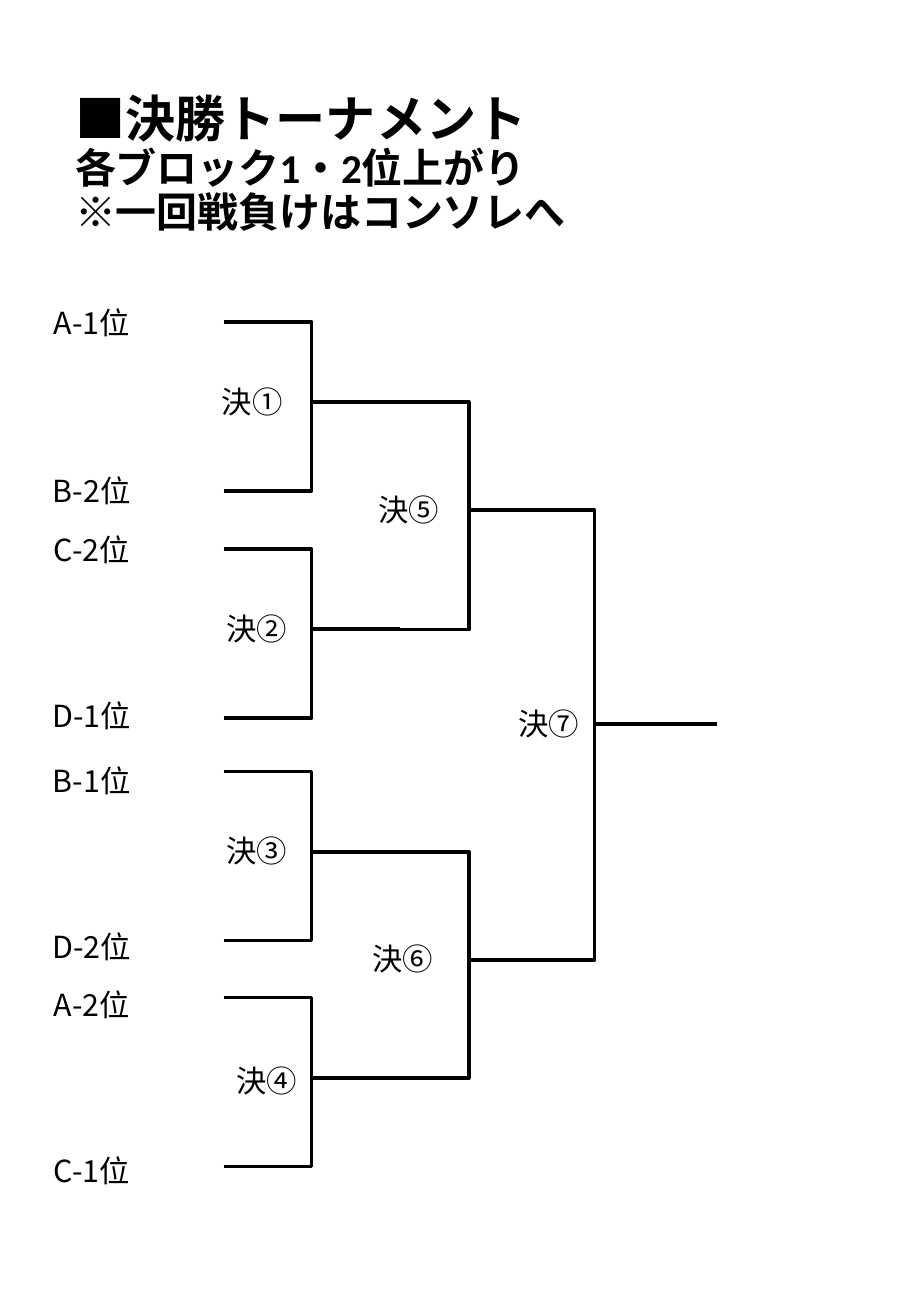
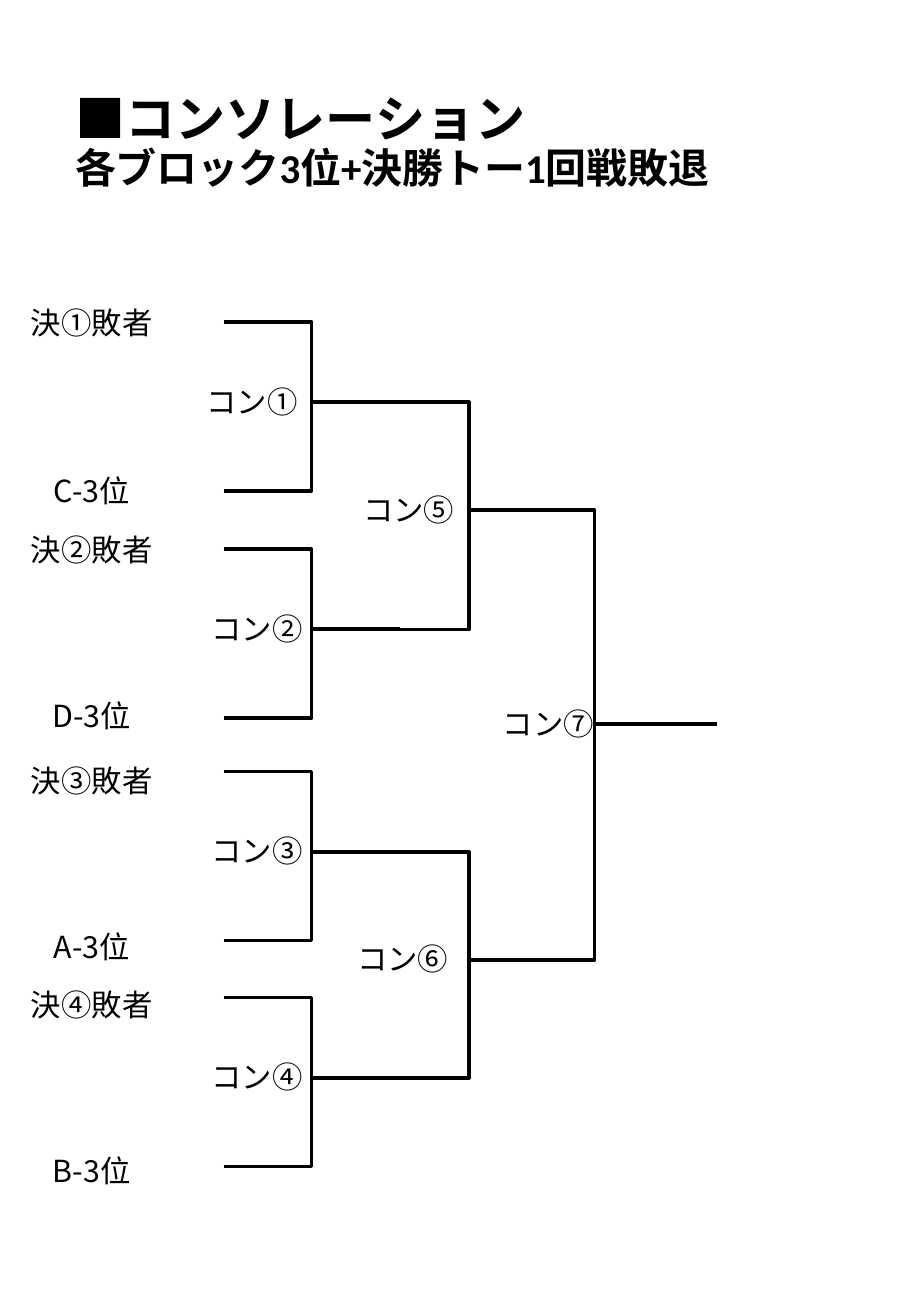
import pptx
import pptx.util
import pptx.dml.color
import pptx.enum.shapes
import pptx.enum.text
import pptx.oxml.ns
from lxml import etree

PX = 9144
OUTPUT_RATIO = 0.476
ROUND_X = [(184, 329), (285, 487), (389, 590)]
FIRST_ROUND = [(265, 404), (452, 591), (635, 774), (821, 960)]
ENTRY_Y = [245, 384, 432, 569, 622, 759, 807, 943]
MATCH_X = [130, 134, 134, 134, 259, 254, 374]
NUMBERS = "①②③④⑤⑥⑦"


def px(n):
    return pptx.util.Emu(n * PX)


def color(value):
    return pptx.dml.color.RGBColor.from_string(value)


class Deck:
    ink = "000000"
    title_font = "Calibri"
    label_font = "Noto Sans CJK JP"

    def __init__(self):
        self.prs = pptx.Presentation()
        self.prs.slide_width, self.prs.slide_height = px(750), px(1083)
        self.s = None

    def slide(self):
        self.s = self.prs.slides.add_slide(self.prs.slide_layouts[6])

    def box(self, x, y, w, h):
        tf = self.s.shapes.add_textbox(px(x), px(y), px(w), px(h)).text_frame
        tf.word_wrap = True
        return tf

    def font(self, p, name):
        p.font.name = name
        p.font.color.rgb = color(self.ink)
        qn = pptx.oxml.ns.qn
        props = p._p.pPr.find(qn("a:defRPr"))
        etree.SubElement(props, qn("a:ea")).set("typeface", self.label_font)

    def title(self, y, w, heading, *details):
        tf = self.box(52, y, w, 50)
        tf.vertical_anchor = pptx.enum.text.MSO_ANCHOR.MIDDLE
        p = tf.paragraphs[0]
        p.line_spacing = 0.9
        self.font(p, self.title_font)
        p.font.bold = True
        for i, text in enumerate((heading, *details)):
            if i:
                p.add_line_break()
            r = p.add_run()
            r.text = text
            r.font.size = pptx.util.Pt(24.3 if i else 29.7)

    def label(self, x, y, text):
        tf = self.box(x, y, 155, 40)
        tf.auto_size = pptx.enum.text.MSO_AUTO_SIZE.SHAPE_TO_FIT_TEXT
        p = tf.paragraphs[0]
        p.text = text
        p.alignment = pptx.enum.text.PP_ALIGN.CENTER
        self.font(p, self.label_font)
        p.font.size = pptx.util.Pt(18)

    def bracket(self, left, right, top, bottom):
        out = top + round((bottom - top) * OUTPUT_RATIO)
        group = self.s.shapes.add_group_shape()
        for y in (top, bottom):
            line = group.shapes.add_connector(
                pptx.enum.shapes.MSO_CONNECTOR.ELBOW,
                px(left), px(y), px(right), px(out))
            line.line.color.rgb = color(self.ink)
            line.line.width = pptx.util.Pt(2.25)
            etree.SubElement(line._element.spPr, pptx.oxml.ns.qn("a:effectLst"))
        return out

    def tournament(self, entries, prefix, nudges):
        outputs = []
        pairs = FIRST_ROUND
        for left, right in ROUND_X:
            outs = [self.bracket(left, right, *pair) for pair in pairs]
            outputs += outs
            pairs = list(zip(outs[::2], outs[1::2]))
        for y, text in zip(ENTRY_Y, entries):
            self.label(-2, y, text)
        for number, x, y in zip(NUMBERS, MATCH_X, outputs):
            dx, dy = nudges.get(number, (0, 0))
            self.label(x + dx, y - 21 + dy, prefix + number)


def main():
    deck = Deck()

    deck.slide()
    deck.title(111, 647, "■決勝トーナメント",
               "各ブロック1・2位上がり", "※一回戦負けはコンソレへ")
    deck.tournament(["A-1位", "B-2位", "C-2位", "D-1位",
                     "B-1位", "D-2位", "A-2位", "C-1位"],
                    "決", {"④": (8, 3)})

    deck.slide()
    deck.title(93, 679, "■コンソレーション",
               "各ブロック3位+決勝トー1回戦敗退")
    deck.tournament(["決①敗者", "C-3位", "決②敗者", "D-3位",
                     "決③敗者", "A-3位", "決④敗者", "B-3位"],
                    "コン", {})

    deck.prs.save("out.pptx")


if __name__ == "__main__":
    main()
